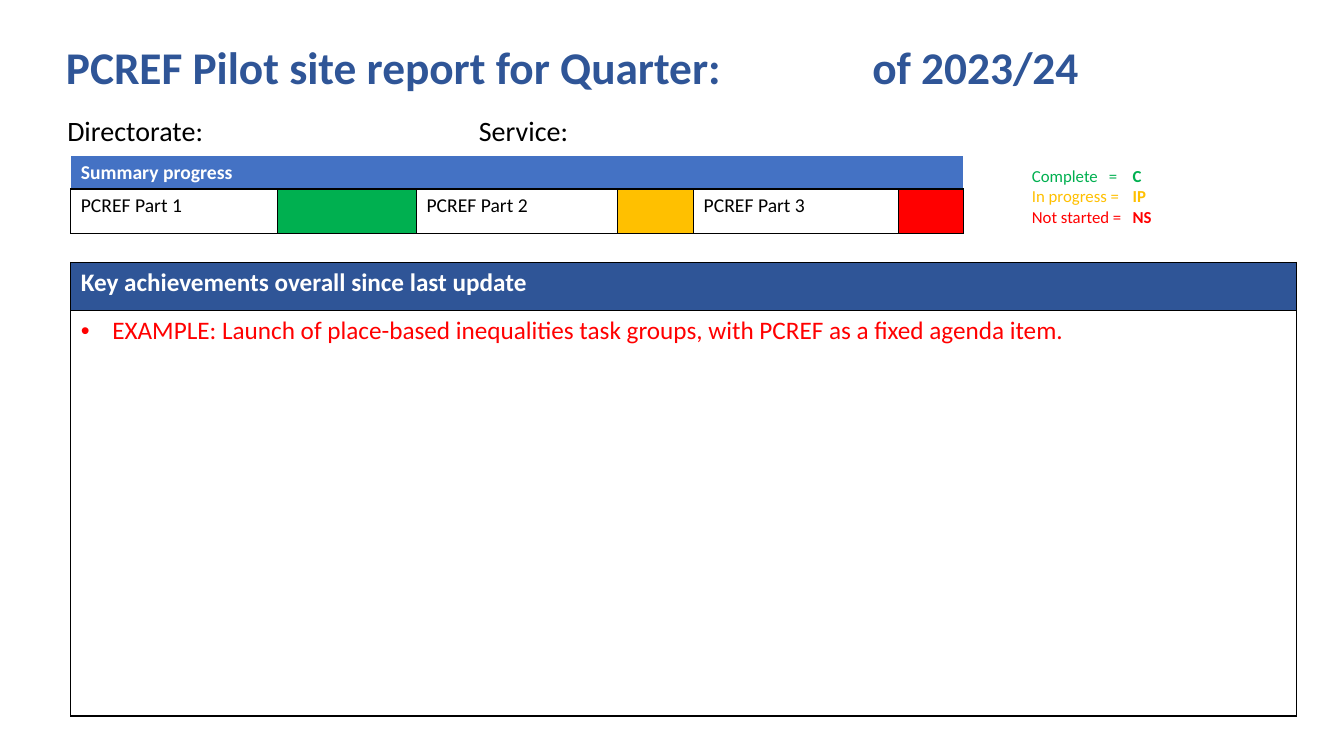
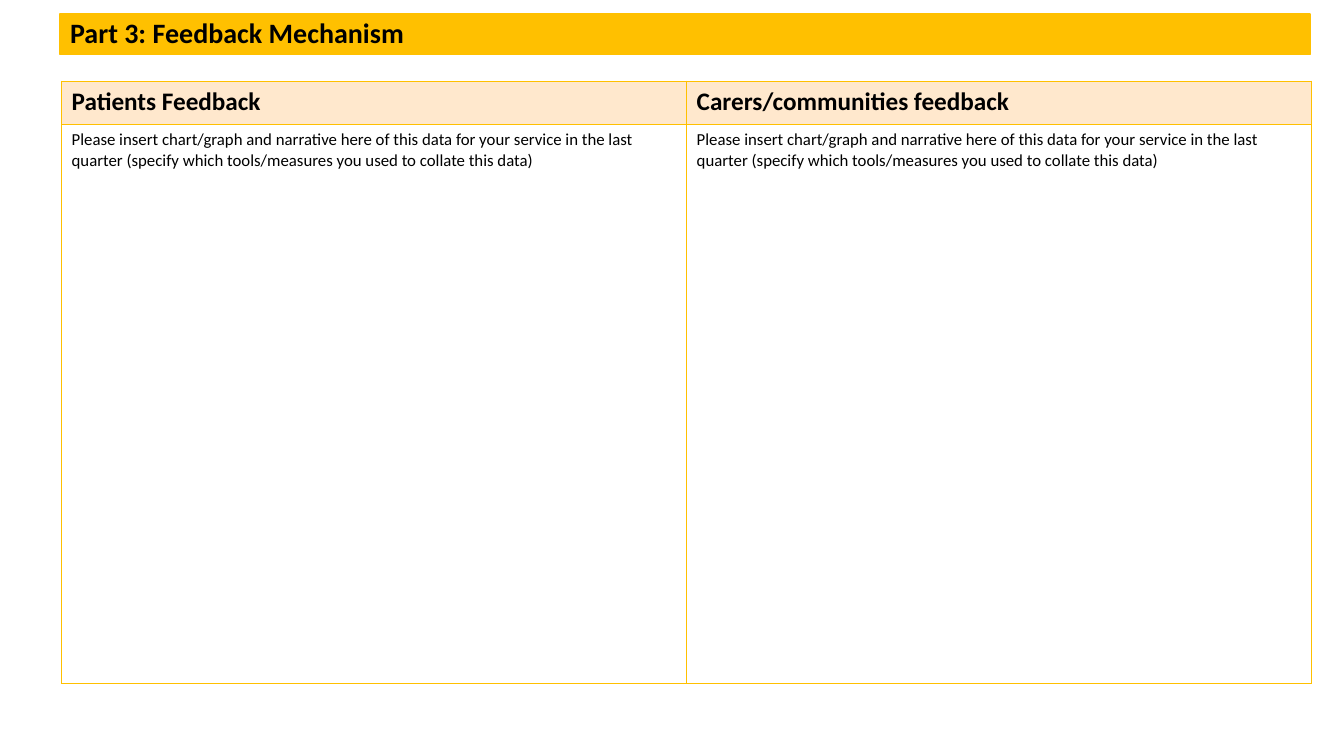
from dataclasses import dataclass

import pptx
import pptx.dml.color
import pptx.enum.shapes
import pptx.enum.text
import pptx.oxml
import pptx.oxml.ns
import pptx.util

Pt = pptx.util.Pt
ANCHOR = pptx.enum.text.MSO_ANCHOR

# Shared look
FONT = "Calibri"
COLORS = {
    "black": "000000", "white": "FFFFFF", "navy": "2F5597", "blue": "4472C4",
    "green": "00B050", "amber": "FFC000", "red": "FF0000", "peach": "FFE8CD",
}
SIDES = ("lnL", "lnR", "lnT", "lnB")


@dataclass(frozen=True)
class Box:
    left: float
    top: float
    width: float
    height: float

    def lengths(self) -> tuple:
        return Pt(self.left), Pt(self.top), Pt(self.width), Pt(self.height)


@dataclass(frozen=True)
class Style:
    size: float
    color: str = "black"
    bold: bool = False


@dataclass(frozen=True)
class Line:
    """One paragraph: its (text, style) runs and layout."""
    runs: tuple
    spacing: float = 1.0
    tabs: tuple = ()
    bullet_indent: float = 0


@dataclass(frozen=True)
class Cell:
    text: str = ""
    style: Style = Style(14)
    fill: str = ""
    bullet_indent: float = 0
    border: tuple = ("black",) * 4  # left, right, top, bottom


def rgb(name: str) -> pptx.dml.color.RGBColor:
    return pptx.dml.color.RGBColor.from_string(COLORS[name])


def add_element(parent, tag: str, **attributes):
    element = pptx.oxml.parse_xml(f"<{tag} {pptx.oxml.ns.nsdecls('a')}/>")
    for name, value in attributes.items():
        element.set(name, str(value))
    parent.append(element)
    return element


def write_lines(frame, lines: tuple) -> None:
    for index, line in enumerate(lines):
        paragraph = frame.paragraphs[0] if index == 0 else frame.add_paragraph()
        paragraph.alignment = pptx.enum.text.PP_ALIGN.LEFT
        paragraph.line_spacing = line.spacing
        properties = paragraph._p.get_or_add_pPr()
        if line.bullet_indent:
            indent = Pt(line.bullet_indent)
            properties.set("marL", str(indent))
            properties.set("indent", str(-indent))
            add_element(properties, "a:buFont", typeface="Arial")
            add_element(properties, "a:buChar", char="•")
        if line.tabs:
            stops = add_element(properties, "a:tabLst")
            for stop in line.tabs:
                add_element(stops, "a:tab", pos=Pt(stop), algn="l")
        for text, style in line.runs:
            run = paragraph.add_run()
            run.text = text
            font_format = {"name": FONT, "size": Pt(style.size), "bold": style.bold}
            for name, value in font_format.items():
                setattr(run.font, name, value)
            run.font.color.rgb = rgb(style.color)


def add_text(slide, box: Box, lines: tuple, anchor=ANCHOR.TOP) -> None:
    frame = slide.shapes.add_textbox(*box.lengths()).text_frame
    for name, value in {"word_wrap": True, "vertical_anchor": anchor}.items():
        setattr(frame, name, value)
    write_lines(frame, lines)


def add_banner(slide, box: Box, text: str, color: str) -> None:
    shape = slide.shapes.add_shape(
        pptx.enum.shapes.MSO_SHAPE.RECTANGLE, *box.lengths())
    shape.shadow.inherit = False
    shape.fill.solid()
    shape.fill.fore_color.rgb = rgb(color)
    shape.line.color.rgb = rgb(color)
    shape.line.width = Pt(1.25)
    shape.text_frame.vertical_anchor = ANCHOR.MIDDLE
    write_lines(shape.text_frame, (Line(((text, Style(20, bold=True)),), 0.9),))


def set_borders(cell, colors: tuple) -> None:
    properties = cell._tc.get_or_add_tcPr()
    for index, (side, color) in enumerate(zip(SIDES, colors)):
        border = add_element(properties, f"a:{side}", w=Pt(1))
        fill = add_element(border, "a:solidFill")
        add_element(fill, "a:srgbClr", val=COLORS[color])
        properties.insert(index, border)


def add_table(slide, left: float, top: float, widths: tuple, heights: tuple,
              rows: tuple) -> None:
    """Draw rows of cells; a row with a single cell spans all columns."""
    box = Box(left, top, sum(widths), sum(heights))
    table = slide.shapes.add_table(len(heights), len(widths), *box.lengths()).table
    table.first_row = table.horz_banding = False
    for column, width in zip(table.columns, widths):
        column.width = Pt(width)
    for index, (height, row) in enumerate(zip(heights, rows)):
        table.rows[index].height = Pt(height)
        spans = len(row) < len(widths)
        if spans:
            table.cell(index, 0).merge(table.cell(index, len(widths) - 1))
        for position in range(len(widths)):
            content = row[0] if spans else row[position]
            cell = table.cell(index, position)
            if content.fill:
                cell.fill.solid()
                cell.fill.fore_color.rgb = rgb(content.fill)
            else:
                cell.fill.background()
            set_borders(cell, content.border)
            if content.text and not cell.is_spanned:
                write_lines(cell.text_frame, (Line(
                    ((content.text, content.style),),
                    bullet_indent=content.bullet_indent),))


def build_report(slide) -> None:
    # Title and service details
    add_text(slide, Box(40, 22, 776, 56), (Line(
        (("PCREF Pilot site report for Quarter:\tof 2023/24",
          Style(32.4, "navy", True)),), 0.9, (576,)),), ANCHOR.MIDDLE)
    add_text(slide, Box(41, 80, 756, 29), (Line(
        (("Directorate:\tService:", Style(20)),), 0.9, (294,)),), ANCHOR.BOTTOM)

    # Key achievements
    add_table(slide, 50.5, 187.5, (875.5,), (34.5, 289.5), (
        (Cell("Key achievements overall since last update",
              Style(18, "white", True), "navy"),),
        (Cell("EXAMPLE: Launch of place-based inequalities task groups, "
              "with PCREF as a fixed agenda item.",
              Style(18, "red"), bullet_indent=22.5),),
    ))

    # Status legend
    legend = (("Complete\t=", "C", "green"), ("In progress =", "IP", "amber"),
              ("Not started =", "NS", "red"))
    add_text(slide, Box(730, 115, 102, 51), tuple(
        Line(((f"{label}\t", Style(12, color)), (code, Style(12, color, True))),
             tabs=(55, 72))
        for label, code, color in legend))

    # Summary progress
    heading = Cell("Summary progress", Style(14, "white", True), "blue",
                   border=("white", "white", "white", "black"))
    parts = tuple(
        cell for number, color in enumerate(("green", "amber", "red"), start=1)
        for cell in (Cell(f"PCREF Part {number}"), Cell(fill=color)))
    add_table(slide, 50.5, 111, (147.5, 99.5, 143.5, 54.5, 146.5, 46.5),
              (24, 32), ((heading,), parts))


def build_feedback(slide) -> None:
    # Feedback columns
    amber = ("amber",) * 4
    headings = ("Patients Feedback", "Carers/communities feedback")
    prompts = (
        "Please insert chart/graph and narrative here of this data for your "
        "service in the last quarter (specify which tools/measures you used "
        "to collate this data)",
        "Please insert chart/graph and narrative here of this data for your "
        "service in the last quarter (specify which tools/measures you used "
        "to collate this data)",
    )
    add_table(slide, 44, 58, (446.5, 446.5), (31, 399), (
        tuple(Cell(text, Style(18, bold=True), "peach", border=amber)
              for text in headings),
        tuple(Cell(text, Style(12), border=amber) for text in prompts),
    ))

    # Section banner
    add_banner(slide, Box(43, 10, 893, 29), "Part 3: Feedback Mechanism", "amber")


def main() -> None:
    presentation = pptx.Presentation()
    presentation.slide_width = Pt(960)
    presentation.slide_height = Pt(540)
    for build in (build_report, build_feedback):
        build(presentation.slides.add_slide(presentation.slide_layouts[6]))
    presentation.save("out.pptx")


if __name__ == "__main__":
    main()
